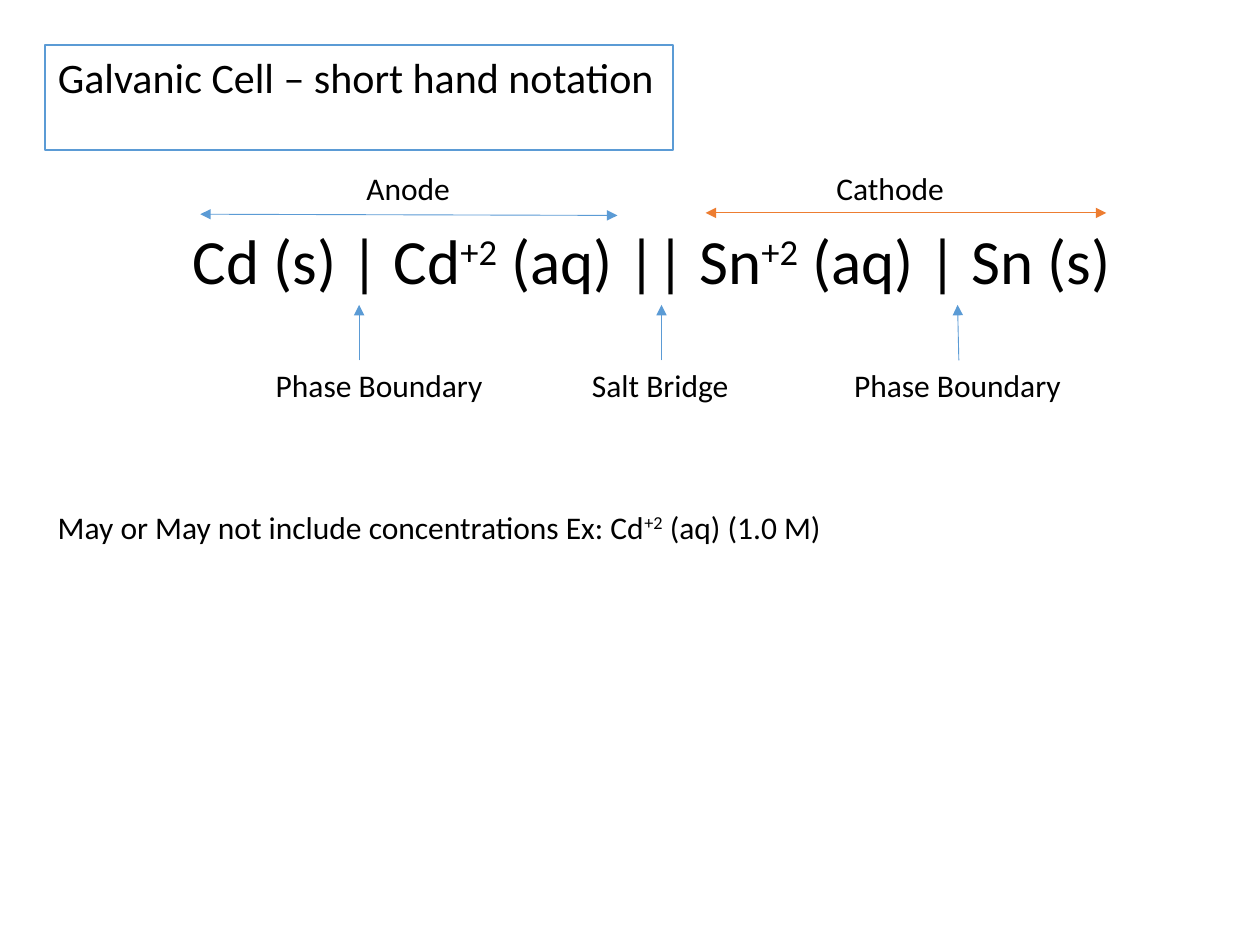
from dataclasses import dataclass

from lxml.etree import SubElement
from pptx import Presentation
from pptx.dml.color import RGBColor
from pptx.enum.shapes import MSO_CONNECTOR
from pptx.enum.text import MSO_ANCHOR, MSO_AUTO_SIZE, PP_ALIGN
from pptx.oxml.ns import qn
from pptx.util import Inches, Pt


@dataclass(frozen=True)
class Theme:
    font: str = "Calibri"
    ink: RGBColor = RGBColor(0, 0, 0)
    paper: RGBColor = RGBColor(255, 255, 255)
    blue: RGBColor = RGBColor(0x5B, 0x9B, 0xD5)
    orange: RGBColor = RGBColor(0xED, 0x7D, 0x31)
    title: int = 24
    cell: int = 36
    label: int = 18
    frame: float = 1
    arrow: float = 0.5


THEME = Theme()
WIDE, HIGH = 10, 7.5

# Shared rows and margin, in inches
LEFT = 0.36
SIDE_ROW, SPAN_ROW, CELL_ROW = 1.29, 1.69, 1.71
TIP_ROW, PART_ROW, NOTE_ROW = 2.42, 2.86, 3.98
LABEL_HIGH = 0.4


def write(shape, text, size):
    """Fill a shape with runs; every second piece between ^ is raised."""
    frame = shape.text_frame
    frame.word_wrap = False
    frame.auto_size = MSO_AUTO_SIZE.SHAPE_TO_FIT_TEXT
    frame.vertical_anchor = MSO_ANCHOR.TOP
    para = frame.paragraphs[0]
    para.alignment = PP_ALIGN.LEFT
    para.line_spacing = 1.0
    for i, piece in enumerate(text.split("^")):
        run = para.add_run()
        run.text = piece
        run.font.name = THEME.font
        run.font.size = Pt(size)
        run.font.color.rgb = THEME.ink
        if i % 2:
            run.font._element.set("baseline", "30000")


def add_title(slide, text, *box):
    title = slide.shapes.title
    title.left, title.top, title.width, title.height = map(Inches, box)
    title.fill.solid()
    title.fill.fore_color.rgb = THEME.paper
    title.line.color.rgb = THEME.blue
    title.line.width = Pt(THEME.frame)
    write(title, text, THEME.title)


def add_text(slide, text, left, top, width, high=LABEL_HIGH, size=THEME.label):
    box = slide.shapes.add_textbox(*map(Inches, (left, top, width, high)))
    write(box, text, size)
    return box


def add_arrow(slide, start, end, color, both=False):
    line = slide.shapes.add_connector(
        MSO_CONNECTOR.STRAIGHT, *map(Inches, (*start, *end)))
    line.line.color.rgb = color
    line.line.width = Pt(THEME.arrow)
    props = line._element.spPr
    for end_tag in ("a:headEnd", "a:tailEnd") if both else ("a:tailEnd",):
        SubElement(props.find(qn("a:ln")), qn(end_tag), type="triangle")
    SubElement(props, qn("a:effectLst"))
    return line


def main():
    deck = Presentation()
    deck.slide_width, deck.slide_height = Inches(WIDE), Inches(HIGH)
    slide = deck.slides.add_slide(deck.slide_layouts[5])

    add_title(slide, "Galvanic Cell – short hand notation",
              LEFT, LEFT, 4.98, 0.5)

    # Cell notation
    cell = add_text(slide, "Cd (s) | Cd^+2^ (aq) || Sn^+2^ (aq) | Sn (s)",
                    1.43, CELL_ROW, 7.64, 0.71, THEME.cell)

    # Electrodes: label, its left and width, span ends, slope, colour
    sides = [("Anode", 2.81, 0.87, 1.59, 4.9, 0.01, THEME.blue),
             ("Cathode", 6.54, 1.07, 5.6, 8.78, 0, THEME.orange)]
    for name, left, width, start, end, drop, color in sides:
        add_text(slide, name, left, SIDE_ROW, width)
        top = SPAN_ROW + drop
        add_arrow(slide, (start, top), (end, top + drop), color, both=True)

    # Parts below the notation: label, its left and width, arrow column
    parts = [("Phase Boundary", 2.09, 1.86, 2.85),
             ("Salt Bridge", 4.6, 1.3, 5.25),
             ("Phase Boundary", 6.68, 1.86, 7.6)]
    for name, left, width, col in parts:
        label = add_text(slide, name, left, PART_ROW, width)
        arrow = add_arrow(slide, (col, PART_ROW), (col, TIP_ROW), THEME.blue)
        if abs(left + width / 2 - col) < 0.02:
            arrow.begin_connect(label, 0)
        if abs(cell.left + cell.width / 2 - Inches(col)) < Inches(0.02):
            arrow.end_connect(cell, 2)

    # Closing remark
    add_text(slide,
             "May or May not include concentrations Ex: Cd^+2^ (aq) (1.0 M)",
             LEFT, NOTE_ROW, 6.35)

    deck.save("out.pptx")


if __name__ == "__main__":
    main()
